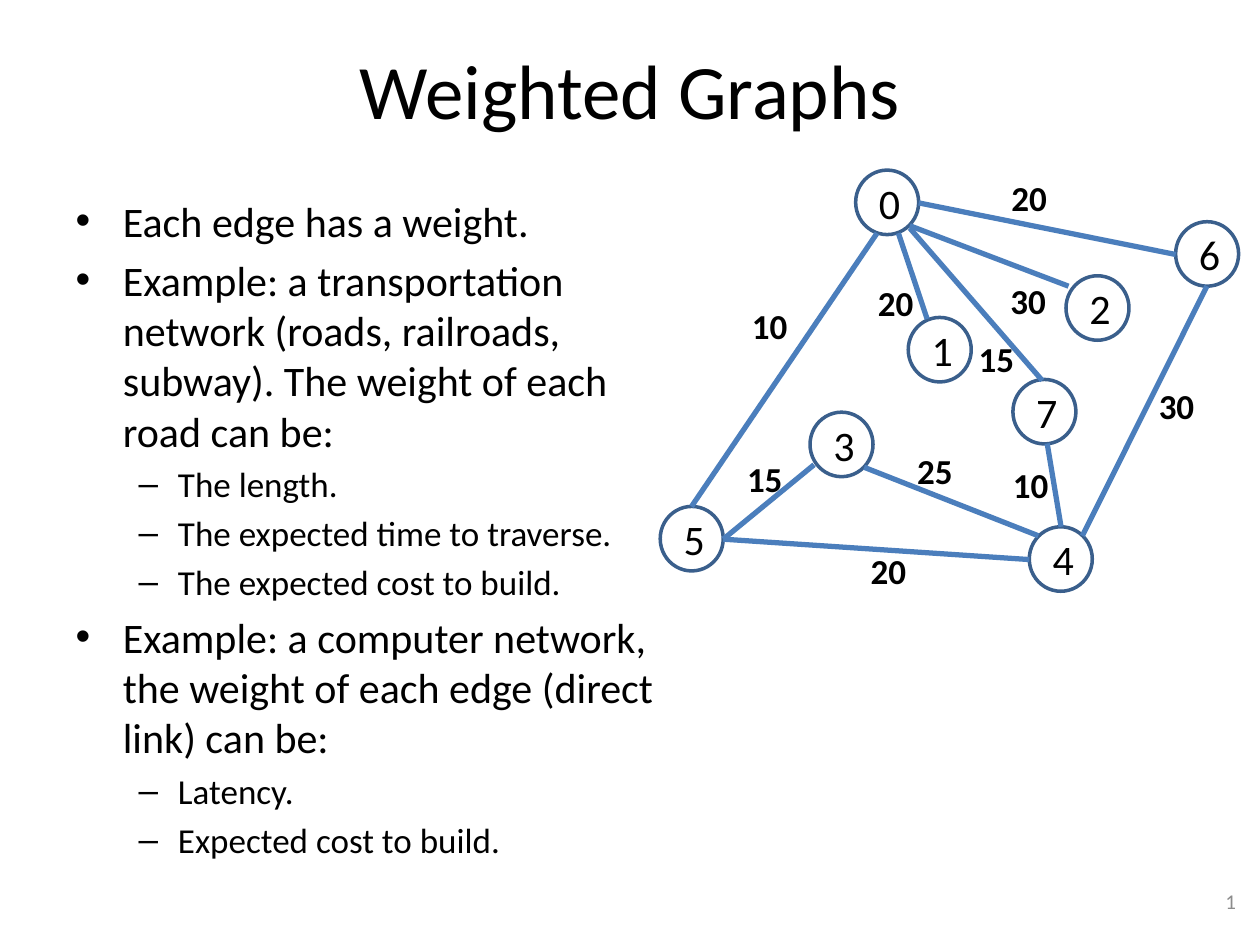
from lxml import etree
from pptx import Presentation
from pptx.dml.color import RGBColor
from pptx.enum.shapes import MSO_CONNECTOR, MSO_SHAPE
from pptx.enum.text import MSO_ANCHOR, MSO_AUTO_SIZE, PP_ALIGN
from pptx.oxml.ns import qn
from pptx.util import Cm, Pt

LINE = MSO_CONNECTOR.STRAIGHT
OVAL = MSO_SHAPE.OVAL
MIDDLE = MSO_ANCHOR.MIDDLE
FIXED = MSO_AUTO_SIZE.NONE
CENTER, RIGHT = PP_ALIGN.CENTER, PP_ALIGN.RIGHT


def paint(color, value):
    color.rgb = RGBColor.from_string(value)


def style(para, size, value="000000", bold=False):
    font = para.font
    font.name, font.size, font.bold = "Calibri", Pt(size), bold
    paint(font.color, value)


prs = Presentation()
prs.slide_width, prs.slide_height = Cm(25.4), Cm(19.05)
slide = prs.slides.add_slide(prs.slide_layouts[1])
shapes = slide.shapes

# Title and list
title, body = slide.placeholders
title.left, title.top, title.width, title.height = Cm(1.27), Cm(0.2), Cm(22.86), Cm(3.18)
title.text_frame.text = "Weighted Graphs"
style(title.text_frame.paragraphs[0], 44)

body.left, body.top, body.width, body.height = Cm(1.27), Cm(3.81), Cm(12.85), Cm(13.97)
frame = body.text_frame
points = [
    (0, "Each edge has a weight."),
    (0, "Example: a transportation network (roads, railroads, subway). "
        "The weight of each road can be:"),
    (1, "The length."),
    (1, "The expected time to traverse."),
    (1, "The expected cost to build."),
    (0, "Example: a computer network, the weight of each edge (direct link) can be:"),
    (1, "Latency."),
    (1, "Expected cost to build."),
]
frame.text = "\n".join(text for level, text in points)
frame.auto_size = FIXED
for para, (level, text) in zip(frame.paragraphs, points):
    para.level = level
    style(para, 20 if level else 24)

# Slide number
box = shapes.add_textbox(Cm(19.25), Cm(17.65), Cm(5.92), Cm(1.02))
box.text_frame.vertical_anchor = MIDDLE
para = box.text_frame.paragraphs[0]
para.alignment = RIGHT
run = para.add_run()
run.text = "2"
run.font.name, run.font.size = "Calibri", Pt(12)
paint(run.font.color, "8C8C8C")
field = run._r
field.tag = qn("a:fld")
field.set("id", "{B6F15528-21DE-4FAA-801E-634DDDAF4B2B}")
field.set("type", "slidenum")

# Vertices: left and top, by number
nodes = [
    (17.25, 3.43), (18.31, 6.4), (21.49, 5.56), (16.33, 8.31),
    (20.75, 10.62), (13.31, 10.21), (23.7, 4.47), (20.42, 7.65),
]
for number, (left, top) in enumerate(nodes):
    node = shapes.add_shape(OVAL, Cm(left), Cm(top), Cm(1.27), Cm(1.3))
    node.shadow.inherit = False
    node.fill.background()
    node.line.width = Pt(2)
    paint(node.line.color, "3A5F8C")
    frame = node.text_frame
    frame.margin_left = Cm(0.1)
    frame.margin_right = frame.margin_top = frame.margin_bottom = 0
    frame.vertical_anchor = MIDDLE
    frame.word_wrap = False
    frame.text = str(number)
    para = frame.paragraphs[0]
    para.alignment = CENTER
    style(para, 24)

# Edges: start, end, weight, left and top of the weight
edges = [
    ((18.52, 4.09), (23.7, 5.13), 20, (20.14, 3.43)),
    ((18.34, 4.55), (21.54, 5.77), 30, (20.12, 5.51)),
    ((18.11, 4.7), (18.69, 6.43), 20, (17.45, 5.56)),
    ((17.68, 4.7), (13.94, 10.21), 10, (14.91, 6.02)),
    ((18.34, 4.6), (21.01, 7.67), 15, (19.48, 6.68)),
    ((14.58, 10.87), (16.41, 9.37), 15, (14.81, 9.09)),
    ((14.58, 10.87), (20.75, 11.28), 20, (17.3, 10.95)),
    ((17.42, 9.42), (20.93, 10.8), 25, (18.24, 8.94)),
    ((21.11, 8.94), (21.39, 10.62), 10, (20.17, 9.22)),
    ((24.33, 5.77), (21.82, 10.8), 30, (23.11, 7.62)),
]
for start, end, weight, (left, top) in edges:
    edge = shapes.add_connector(LINE, *map(Cm, start + end))
    edge.line.width = Pt(3)
    paint(edge.line.color, "4B7EBC")
    etree.SubElement(edge._element.spPr, qn("a:effectLst"))
    label = shapes.add_textbox(Cm(left), Cm(top), Cm(1.24), Cm(1.12))
    label.text_frame.text = str(weight)
    style(label.text_frame.paragraphs[0], 20, bold=True)

prs.save("out.pptx")
